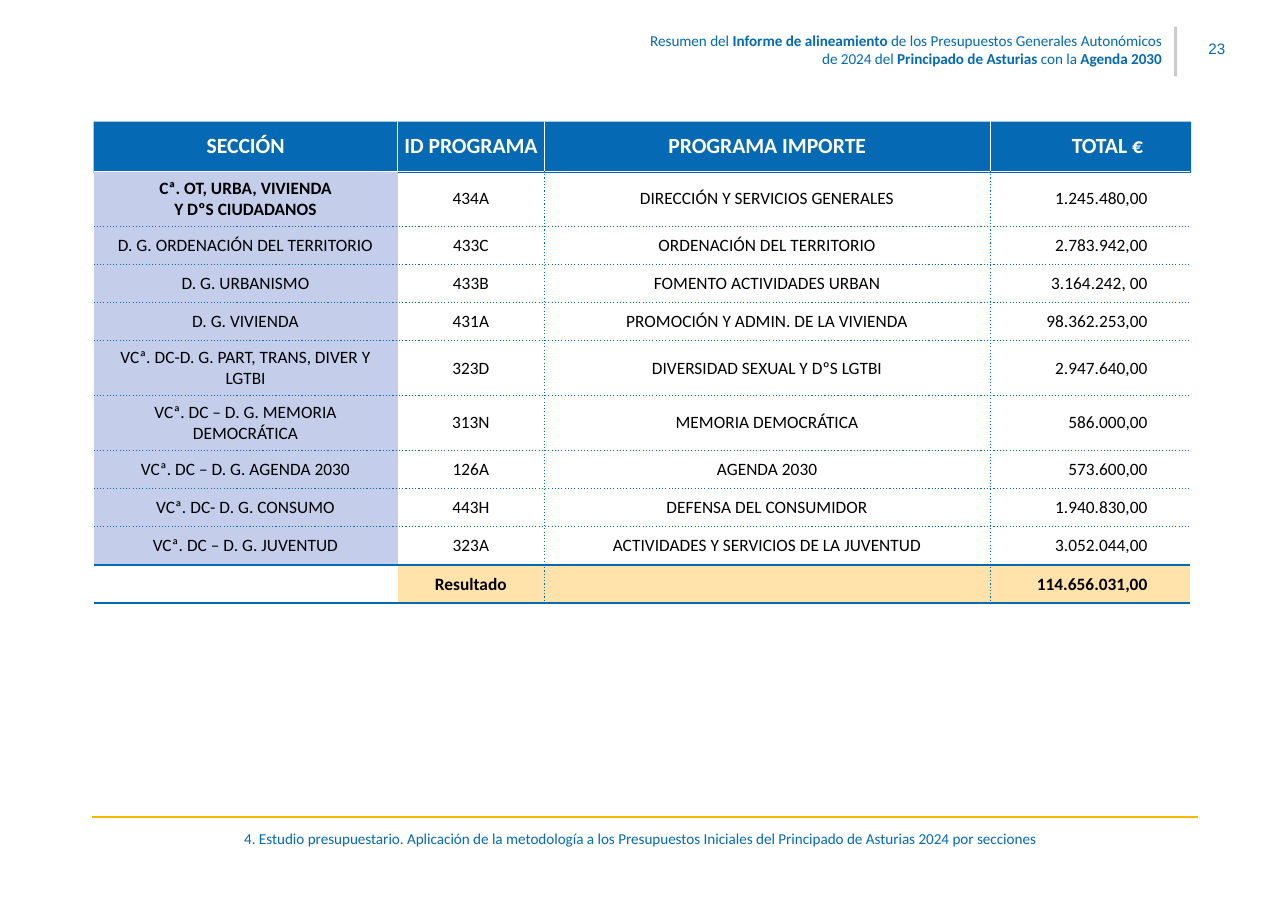
"""Build the slide with the 2024 budget table by section and programme."""
import lxml.etree
import pptx
import pptx.dml.color
import pptx.enum.shapes
import pptx.enum.text
import pptx.oxml.ns
import pptx.util

Inches = pptx.util.Inches
Pt = pptx.util.Pt
RGB = pptx.dml.color.RGBColor.from_string
qn = pptx.oxml.ns.qn
ALIGN = pptx.enum.text.PP_ALIGN
MIDDLE = pptx.enum.text.MSO_ANCHOR.MIDDLE
RECTANGLE = pptx.enum.shapes.MSO_SHAPE.RECTANGLE

THEME = {
    "blue": "0669B3", "lilac": "C4CEEB", "cream": "FFE3AA", "gold": "FBB800",
    "white": "FFFFFF", "black": "000000", "font": "Calibri", "page_font": "Arial",
    "small": Pt(7), "body": Pt(8), "heading": Pt(10),
}


def write(paragraph, pieces, size, color, align, font=THEME["font"]):
    """Fill a paragraph with (text, bold) pieces."""
    paragraph.alignment = align
    for text, bold in pieces:
        run = paragraph.add_run()
        run.text = text
        for key, value in {"size": size, "name": font, "bold": bold}.items():
            setattr(run.font, key, value)
        run.font.color.rgb = RGB(THEME[color])


def draw_border(cell, side, color, width, dash):
    """Add one border line to a cell."""
    line = lxml.etree.SubElement(cell._tc.get_or_add_tcPr(), qn(f"a:ln{side}"), w=str(Pt(width)))
    solid = lxml.etree.SubElement(line, qn("a:solidFill"))
    lxml.etree.SubElement(solid, qn("a:srgbClr"), val=THEME[color])
    lxml.etree.SubElement(line, qn("a:prstDash"), val=dash)


presentation = pptx.Presentation()
presentation.slide_width = Inches(8.26)
presentation.slide_height = Inches(5.83)
slide = presentation.slides.add_slide(presentation.slide_layouts[6])

footer_rule = slide.shapes.add_connector(
    pptx.enum.shapes.MSO_CONNECTOR.STRAIGHT, Inches(0.59), Inches(5.24), Inches(7.68), Inches(5.24))
footer_rule.line.color.rgb = RGB(THEME["gold"])
footer_rule.line.width = Pt(1)
lxml.etree.SubElement(footer_rule._element.spPr, qn("a:effectLst"))

report_title = [
    ("Resumen del ", False), ("Informe de alineamiento ", True),
    ("de los Presupuestos Generales Autonómicos de 2024 del ", False),
    ("Principado de Asturias ", True), ("con la ", False), ("Agenda 2030", True),
]
chapter = [("4. Estudio presupuestario. Aplicación de la metodología a los Presupuestos "
            "Iniciales del Principado de Asturias 2024 por secciones", False)]
captions = [
    ((4.09, 0.19, 3.36, 0.25), report_title, ALIGN.RIGHT, THEME["font"], 1),
    ((7.75, 0.24, 0.12, 0.14), [("23", False)], ALIGN.LEFT, THEME["page_font"], 1),
    ((0.59, 5.31, 7.03, 0.12), chapter, ALIGN.CENTER, THEME["font"], 0.5),
]
for place, pieces, align, font, space in captions:
    frame = slide.shapes.add_textbox(*map(Inches, place)).text_frame
    frame_format = {"word_wrap": True, "margin_left": 0, "margin_right": 0,
                    "margin_top": Inches(0.01), "margin_bottom": 0}
    for key, value in frame_format.items():
        setattr(frame, key, value)
    frame.paragraphs[0].space_before = Pt(space)
    write(frame.paragraphs[0], pieces, THEME["small"], "blue", align, font)

panels = [((7.53, 0.17, 0.02, 0.32), "black"), ((0.6, 0.78, 7.04, 0.33), "blue")]
for place, color in panels:
    panel = slide.shapes.add_shape(RECTANGLE, *map(Inches, place))
    panel.shadow.inherit = False
    panel.fill.solid()
    panel.fill.fore_color.rgb = RGB(THEME[color])
    panel.line.fill.background()
    if color == "black":
        tint = panel._element.spPr.find(".//" + qn("a:srgbClr"))
        lxml.etree.SubElement(tint, qn("a:alpha"), val="20000")

budget = [
    ("SECCIÓN", "ID PROGRAMA", "PROGRAMA IMPORTE", "TOTAL €"),
    ("Cª. OT, URBA, VIVIENDA Y DºS CIUDADANOS", "434A", "DIRECCIÓN Y SERVICIOS GENERALES", "1.245.480,00"),
    ("D. G. ORDENACIÓN DEL TERRITORIO", "433C", "ORDENACIÓN DEL TERRITORIO", "2.783.942,00"),
    ("D. G. URBANISMO", "433B", "FOMENTO ACTIVIDADES URBAN", "3.164.242, 00"),
    ("D. G. VIVIENDA", "431A", "PROMOCIÓN Y ADMIN. DE LA VIVIENDA", "98.362.253,00"),
    ("VCª. DC-D. G. PART, TRANS, DIVER Y LGTBI", "323D", "DIVERSIDAD SEXUAL Y DºS LGTBI", "2.947.640,00"),
    ("VCª. DC – D. G. MEMORIA DEMOCRÁTICA", "313N", "MEMORIA DEMOCRÁTICA", "586.000,00"),
    ("VCª. DC – D. G. AGENDA 2030", "126A", "AGENDA 2030", "573.600,00"),
    ("VCª. DC- D. G. CONSUMO", "443H", "DEFENSA DEL CONSUMIDOR", "1.940.830,00"),
    ("VCª. DC – D. G. JUVENTUD", "323A", "ACTIVIDADES Y SERVICIOS DE LA JUVENTUD", "3.052.044,00"),
    ("", "Resultado", "", "114.656.031,00"),
]
TABLE_HEIGHT, HEADING_HEIGHT, DOUBLE_HEIGHT = 3.09, 0.32, 0.35
double_rows = (1, 5, 6)
last_row, last_column = len(budget) - 1, 3
single_height = ((TABLE_HEIGHT - HEADING_HEIGHT - DOUBLE_HEIGHT * len(double_rows))
                 / (last_row - len(double_rows)))

table_frame = slide.shapes.add_table(
    len(budget), 4, Inches(0.6), Inches(0.78), Inches(7.03), Inches(TABLE_HEIGHT))
table = table_frame.table
table.first_row = table.horz_banding = False
table._tbl.tblPr.find(qn("a:tableStyleId")).text = "{2D5ABB26-0587-4C30-8999-92F81FD0307C}"
for column, width in zip(table.columns, (1.95, 0.94, 2.86, 1.28)):
    column.width = Inches(width)

dotted, solid_blue, solid_white = ("blue", 0.5, "sysDot"), ("blue", 1, "solid"), ("white", 0.5, "solid")
for r, entries in enumerate(budget):
    heading, total = r == 0, r == last_row
    table.rows[r].height = Inches(
        HEADING_HEIGHT if heading else DOUBLE_HEIGHT if r in double_rows else single_height)
    for c, entry in enumerate(entries):
        cell = table.cell(r, c)
        side_margin = 0 if c else 0.4 if r == 1 else 0.1
        right_margin = (0.3 if heading else 0.27) if c == last_column else side_margin
        cell_format = {"margin_left": Inches(side_margin), "margin_right": Inches(right_margin),
                       "margin_top": 0, "margin_bottom": 0, "vertical_anchor": MIDDLE}
        for key, value in cell_format.items():
            setattr(cell, key, value)

        upright = solid_white if heading else dotted
        borders = {
            "L": upright if c > 1 or (heading and c) else None,
            "R": upright if 0 < c < last_column or (heading and c == 0) else None,
            "T": None if heading else solid_white if r == 1 else solid_blue if total else dotted,
            "B": solid_white if heading else solid_blue if r >= last_row - 1 else dotted,
        }
        for side, border in borders.items():
            if border:
                draw_border(cell, side, *border)

        fill = "blue" if heading else "cream" if total and c else "lilac" if c == 0 and not total else None
        if fill:
            cell.fill.solid()
            cell.fill.fore_color.rgb = RGB(THEME[fill])
        else:
            cell.fill.background()

        paragraph = cell.text_frame.paragraphs[0]
        if entry:
            bold = heading or total or (r, c) == (1, 0)
            write(paragraph, [(entry, bold)], THEME["heading" if heading else "body"],
                  "white" if heading else "black", ALIGN.RIGHT if c == last_column else ALIGN.CENTER)
        else:
            lxml.etree.SubElement(paragraph._p, qn("a:endParaRPr"), sz="800")

presentation.save("out.pptx")
